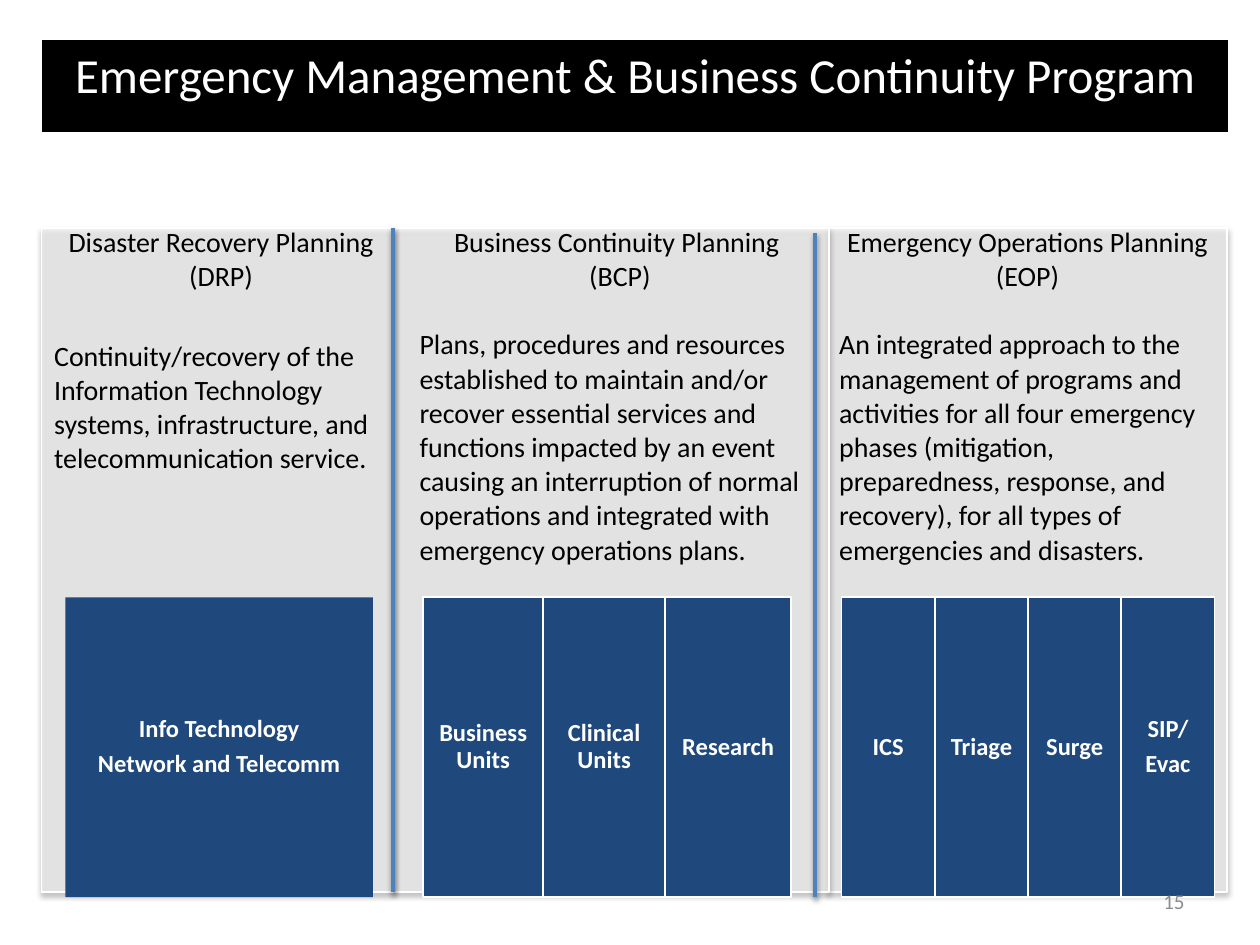
from lxml import etree
from pptx import Presentation
from pptx.dml.color import RGBColor
from pptx.enum.shapes import MSO_CONNECTOR as CONN, MSO_SHAPE as SHAPE
from pptx.enum.text import MSO_ANCHOR as ANCHOR, PP_ALIGN as ALIGN
from pptx.oxml.ns import qn
from pptx.util import Inches, Pt

COLORS = {"white": "FFFFFF", "black": "000000", "panel": "F2F2F2",
          "navy": "1F497D", "divider": "4F81BD", "gray": "8C8C8C"}
NO_GRID_STYLE = "{2D5ABB26-0587-4C30-8999-92F81FD0307C}"


def rgb(name):
    return RGBColor.from_string(COLORS[name])


class Builder:
    """Holds the style and the current slide."""
    font = "Calibri"

    def __init__(self, slide):
        self.s = slide

    def format(self, p, size, color, align=ALIGN.LEFT, bold=False):
        p.alignment = align
        p.font.name, p.font.size, p.font.bold = self.font, Pt(size), bold
        p.font.color.rgb = rgb(color)

    def shadow(self, sp, alpha, dist):
        effects = etree.SubElement(sp._element.spPr, qn("a:effectLst"))
        outer = etree.SubElement(effects, qn("a:outerShdw"), blurRad=str(Pt(3.1)),
                                 dist=str(Pt(dist)), dir="5400000", rotWithShape="0")
        clr = etree.SubElement(outer, qn("a:srgbClr"), val=COLORS["black"])
        etree.SubElement(clr, qn("a:alpha"), val=str(alpha * 1000))

    def rect(self, x, y, w, h, fill, line=None):
        sp = self.s.shapes.add_shape(SHAPE.RECTANGLE, *map(Inches, (x, y, w, h)))
        sp.fill.solid()
        sp.fill.fore_color.rgb = rgb(fill)
        if line:
            sp.line.color.rgb = rgb("white")
            sp.line.width = Pt(line)
        else:
            sp.line.fill.background()
        return sp

    def panel(self, x, y, w, h):
        sp = self.rect(x, y, w, h, "panel", 0.75)
        clr = sp._element.spPr.find(qn("a:solidFill"))[0]
        etree.SubElement(clr, qn("a:alpha"), val="64000")
        self.shadow(sp, 35, 1.8)

    def box(self, x, y, w, h, lines, line=None):
        sp = self.rect(x, y, w, h, "navy", line)
        sp.shadow.inherit = False
        tf = sp.text_frame
        tf.word_wrap, tf.vertical_anchor = True, ANCHOR.MIDDLE
        tf.margin_left = tf.margin_right = Inches(0.06)
        tf.margin_top = tf.margin_bottom = Inches(0.06)
        tf.text = lines
        for p in tf.paragraphs:
            self.format(p, 14, "white", ALIGN.CENTER, True)
            p.line_spacing, p.space_after = 0.9, Pt(5)

    def table(self, x, y, widths, heights):
        frame = self.s.shapes.add_table(len(heights), len(widths), Inches(x), Inches(y),
                                        Inches(sum(widths)), Inches(sum(heights)))
        table = frame.table
        table.first_row = table.horz_banding = False
        table._tbl.tblPr.find(qn("a:tableStyleId")).text = NO_GRID_STYLE
        for col, w in zip(table.columns, widths):
            col.width = Inches(w)
        for row, h in zip(table.rows, heights):
            row.height = Inches(h)
        for cell in table.iter_cells():
            cell.fill.background()
        return table

    def title(self, table, text):
        cell = table.cell(0, 0)
        cell.merge(table.cell(0, len(table.columns) - 1))
        cell.fill.solid()
        cell.fill.fore_color.rgb = rgb("black")
        cell.text = text
        self.format(cell.text_frame.paragraphs[0], 28, "white", ALIGN.CENTER)

    def plan(self, cell, heading, body, gap):
        tf = cell.text_frame
        p = tf.paragraphs[0]
        p.text = heading
        self.format(p, 16, "black", ALIGN.CENTER)
        p = tf.add_paragraph()
        p.text = body
        self.format(p, 16, "black")
        p.space_before = Pt(gap)

    def divider(self, x, top, bottom):
        c = self.s.shapes.add_connector(CONN.STRAIGHT, Inches(x), Inches(top),
                                        Inches(x), Inches(bottom))
        c.line.color.rgb = rgb("divider")
        c.line.width = Pt(2)
        self.shadow(c, 38, 1.6)

    def page_number(self, x, y, w, h, text):
        tf = self.s.shapes.add_textbox(*map(Inches, (x, y, w, h))).text_frame
        tf.word_wrap, tf.vertical_anchor = True, ANCHOR.MIDDLE
        tf.text = text
        self.format(tf.paragraphs[0], 12, "gray", ALIGN.RIGHT)


# Heading, description, gap between them in points
PLANS = [
    ("Disaster Recovery Planning \v(DRP) ",
     "Continuity/recovery of the Information Technology systems, infrastructure, "
     "and telecommunication service.", 26),
    ("Business Continuity Planning\v (BCP)",
     "Plans, procedures and resources established to maintain and/or recover essential "
     "services and functions impacted by an event causing an interruption of normal "
     "operations and integrated with emergency operations plans.", 19.5),
    ("Emergency Operations Planning (EOP)",
     "An integrated approach to the management of programs and activities for all four "
     "emergency phases (mitigation, preparedness, response, and recovery), for all types "
     "of emergencies and disasters.", 19.5),
]

# Left edge, outline width, and (label, width) of each box in a row
BOX_GROUPS = [
    (0.52, None, [("Info Technology\nNetwork and Telecomm", 2.44)]),
    (3.36, 1, [("Business Units", 0.95), ("Clinical Units", 0.97), ("Research", 1)]),
    (6.68, 1, [(t, 0.74) for t in ("ICS", "Triage", "Surge", "SIP/\nEvac")]),
]


def main():
    prs = Presentation()
    prs.slide_width, prs.slide_height = Inches(10), Inches(7.5)
    b = Builder(prs.slides.add_slide(prs.slide_layouts[6]))

    # Background panels
    for x, w in ((6.58, 3.16), (3.12, 3.46), (0.33, 2.79)):
        b.panel(x, 1.81, w, 5.27)

    # Title and plan descriptions
    table = b.table(0.33, 0.32, (2.9, 3.33, 3.19), (0.73, 0.69, 2.76))
    b.title(table, "Emergency Management & Business Continuity Program")
    for i, plan in enumerate(PLANS):
        b.plan(table.cell(2, i), *plan)

    # Component boxes
    for x, line, boxes in BOX_GROUPS:
        for label, w in boxes:
            b.box(x, 4.74, w, 2.38, label, line)
            x += w

    # Page number and column dividers
    b.page_number(7.17, 6.95, 2.33, 0.4, "15")
    b.divider(3.12, 1.81, 7.08)
    b.divider(6.47, 1.85, 7.12)

    prs.save("out.pptx")


if __name__ == "__main__":
    main()
